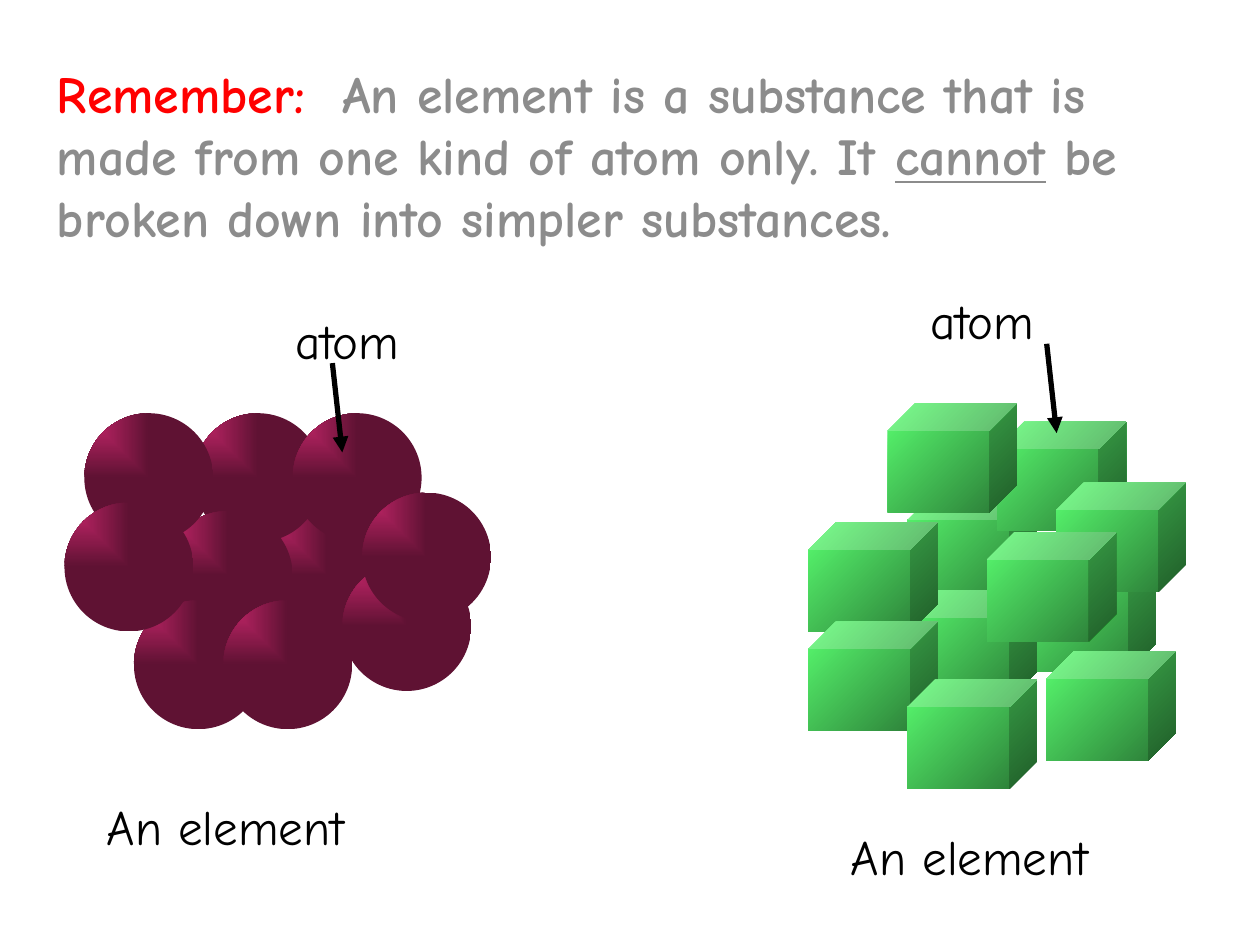
from lxml import etree
from pptx import Presentation
from pptx.dml.color import RGBColor
from pptx.enum.shapes import MSO_CONNECTOR, MSO_SHAPE
from pptx.oxml.ns import qn
from pptx.util import Cm, Pt

OVAL = MSO_SHAPE.OVAL
CUBE = MSO_SHAPE.CUBE
STRAIGHT = MSO_CONNECTOR.STRAIGHT

FONT = "Comic Neue"
RED = RGBColor(0xFF, 0x00, 0x00)
GREY = RGBColor(0x8C, 0x8C, 0x8C)
BLACK = RGBColor(0x00, 0x00, 0x00)
PINK = RGBColor(0xCD, 0x27, 0x6E)
MAROON = RGBColor(0x5F, 0x12, 0x33)
LIGHT_GREEN = RGBColor(0x59, 0xFD, 0x70)
DARK_GREEN = RGBColor(0x29, 0x75, 0x34)

# Left and top of each atom in cm, from back to front
SPHERES = [(5.3, 10.3), (3.9, 8.33), (5.9, 8.33), (3.3, 10.3), (2.7, 12.1),
           (4.5, 12.1), (6.9, 11.33), (7.3, 9.93), (1.7, 8.33), (1.3, 10.13)]
CUBES = [(18.3, 9.93), (20.1, 8.5), (20.7, 11.33), (18.3, 11.9), (21.3, 9.73),
         (17.9, 8.13), (16.3, 10.53), (16.3, 12.53), (18.3, 13.7),
         (21.1, 13.13), (19.9, 10.73)]


def add_box(slide, left, top, width, height):
    box = slide.shapes.add_textbox(Cm(left), Cm(top), Cm(width), Cm(height))
    box.text_frame.word_wrap = True
    return box.text_frame.paragraphs[0]


def add_definition(slide):
    para = add_box(slide, 0.9, 1.12, 23.2, 4.4)
    para.font.name = FONT
    para.font.size = Pt(29.6)
    para.font.bold = True
    spans = [
        ("Remember:  ", RED, False),
        ("An element is a substance that is made from one kind of atom only. It ",
         GREY, False),
        ("cannot", GREY, True),
        (" be broken down into simpler substances.", GREY, False),
    ]
    for text, color, underlined in spans:
        span = para.add_run()
        span.text = text
        span.font.color.rgb = color
        if underlined:
            span.font.underline = True


def add_label(slide, text, left, top, width):
    para = add_box(slide, left, top, width, 1.45)
    para.text = text
    para.font.name = FONT
    para.font.size = Pt(28)
    para.font.color.rgb = BLACK


def add_atom(slide, kind, position, height, colors):
    left, top = position
    atom = slide.shapes.add_shape(kind, Cm(left), Cm(top), Cm(2.6), Cm(height))
    atom.shadow.inherit = False
    atom.line.fill.background()
    atom.fill.gradient()
    atom.fill.gradient_angle = 315
    for stop, color, place in zip(atom.fill.gradient_stops, colors, (0, 1)):
        stop.color.rgb = color
        stop.position = place
    return atom


def light_from_corner(atom):
    """Turn the linear gradient into one that spreads from the top left."""
    gradient = atom.element.spPr.find(qn("a:gradFill"))
    linear = gradient.find(qn("a:lin"))
    spread = etree.Element(qn("a:path"), {"path": "rect"})
    etree.SubElement(spread, qn("a:fillToRect"), {"r": "100000", "b": "100000"})
    gradient.replace(linear, spread)


def add_arrow(slide, left, top):
    arrow = slide.shapes.add_connector(
        STRAIGHT, Cm(left), Cm(top), Cm(left + 0.2), Cm(top + 1.8))
    arrow.line.color.rgb = BLACK
    arrow.line.width = Pt(3)
    properties = arrow.element.spPr
    etree.SubElement(properties.find(qn("a:ln")), qn("a:tailEnd"),
                     {"type": "triangle"})
    etree.SubElement(properties, qn("a:effectLst"))


def main():
    deck = Presentation()
    deck.slide_width, deck.slide_height = Cm(25.4), Cm(19.05)
    slide = deck.slides.add_slide(deck.slide_layouts[6])

    add_definition(slide)

    # The two elements, each made of one kind of atom
    for position in SPHERES:
        light_from_corner(add_atom(slide, OVAL, position, 2.6, (PINK, MAROON)))
    for position in CUBES:
        add_atom(slide, CUBE, position, 2.2, (LIGHT_GREEN, DARK_GREEN))

    # Captions and pointers
    add_label(slide, "An element", 1.9, 15.93, 6)
    add_label(slide, "An element", 16.9, 16.53, 6)
    add_label(slide, "atom", 5.7, 6.13, 3.2)
    add_arrow(slide, 21.1, 6.93)
    add_label(slide, "atom", 18.5, 5.73, 3.6)
    add_arrow(slide, 6.7, 7.32)

    deck.save("out.pptx")


if __name__ == "__main__":
    main()
